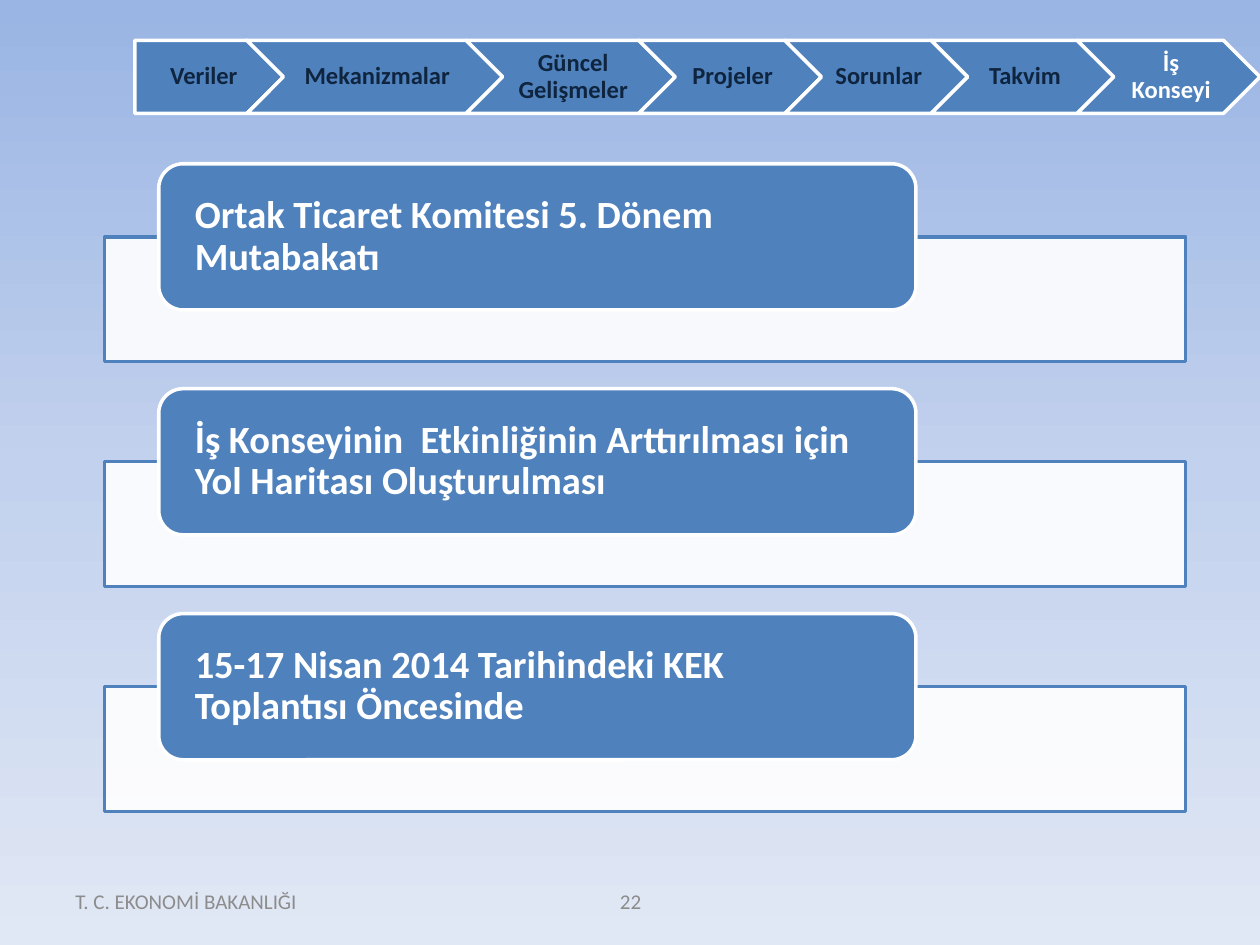
from copy import deepcopy
from lxml import etree
from pptx import Presentation
from pptx import util as u
from pptx.dml.color import RGBColor
from pptx.enum import shapes, text
from pptx.oxml import ns

kinds = shapes.MSO_SHAPE
mid = text.PP_ALIGN.CENTER
left = text.PP_ALIGN.LEFT
blue, white, navy, gray = "4F81BD", "FFFFFF", "0F243E", "8C8C8C"

deck = Presentation()
deck.slide_width, deck.slide_height = u.Inches(10), u.Inches(7.5)
slide = deck.slides.add_slide(deck.slide_layouts[6])


def add(kind, x, y, w, h, fill=None, line=None):
    wide, high = deck.slide_width / 100, deck.slide_height / 100
    area = [round(v) for v in (x * wide, y * high, w * wide, h * high)]
    if kind is None:
        return slide.shapes.add_textbox(*area)
    shape = slide.shapes.add_shape(kind, *area)
    shape.shadow.inherit = False
    shape.fill.solid()
    shape.fill.fore_color.rgb = RGBColor.from_string(fill)
    shape.line.color.rgb = RGBColor.from_string(line)
    shape.line.width = u.Pt(2)
    return shape


def write(shape, words, size, color, align, bold=True, pad=None, gap=0.9):
    frame = shape.text_frame
    frame.word_wrap = True
    frame.vertical_anchor = text.MSO_ANCHOR.MIDDLE
    sides = ("margin_left", "margin_top", "margin_right", "margin_bottom")
    for side, inset in zip(sides, pad or ()):
        setattr(frame, side, u.Inches(inset))
    para = frame.paragraphs[0]
    para.alignment, para.line_spacing = align, gap
    run = para.add_run()
    run.text = words
    looks = {"name": "Calibri", "size": u.Pt(size), "bold": bold}
    for key, value in looks.items():
        setattr(run.font, key, value)
    run.font.color.rgb = RGBColor.from_string(color)


back = slide.background.fill
back.gradient()
back.gradient_angle = 270
stops = slide.background._cSld.find(".//" + ns.qn("a:gsLst"))
stops.insert(1, deepcopy(stops[0]))
tints = ("9AB5E4", "C2D1ED", "E1E8F5")
for stop, tint, spot in zip(back.gradient_stops, tints, (0, 0.5, 1)):
    stop.color.rgb = RGBColor.from_string(tint)
    stop.position = spot

for words, x, w, align in (
    ("T. C. EKONOMİ BAKANLIĞI", 5, 23.3, left),
    ("22", 34.2, 31.7, mid),
):
    write(add(None, x, 92.67, w, 5.33), words, 12, gray, align, bold=False, gap=1)

goals = (
    "Ortak Ticaret Komitesi 5. Dönem Mutabakatı",
    "İş Konseyinin  Etkinliğinin Arttırılması için Yol Haritası Oluşturulması",
    "15-17 Nisan 2014 Tarihindeki KEK Toplantısı Öncesinde",
)
for row, goal in enumerate(goals):
    top = 17.33 + 23.8 * row
    panel = add(kinds.RECTANGLE, 8.3, top + 7.73, 85.8, 13.2, white, blue)
    tone = panel.fill._xPr.find(".//" + ns.qn("a:srgbClr"))
    etree.SubElement(tone, ns.qn("a:alpha"), val="90000")
    card = add(kinds.ROUNDED_RECTANGLE, 12.6, top, 60.1, 15.47, blue, white)
    write(card, goal, 22, white, left, pad=(0.23, 0, 0.23, 0))

steps = (
    ("Veriler", 11.8),
    ("Mekanizmalar", 20.3),
    ("Güncel Gelişmeler", 16.6),
    ("Projeler", 14.5),
    ("Sorunlar", 14.5),
    ("Takvim", 14.5),
    ("İş Konseyi", 14.5),
)
x, lap = 10.7, 2.9
for col, (step, w) in enumerate(steps):
    kind = kinds.CHEVRON if col else kinds.PENTAGON
    color = white if col == len(steps) - 1 else navy
    arrow = add(kind, x, 4.27, w, 7.73, blue, white)
    write(arrow, step, 14, color, mid, pad=(0.06 if col else 0.08, 0.04, 0.02, 0.04))
    x += w - lap

deck.save("out.pptx")
